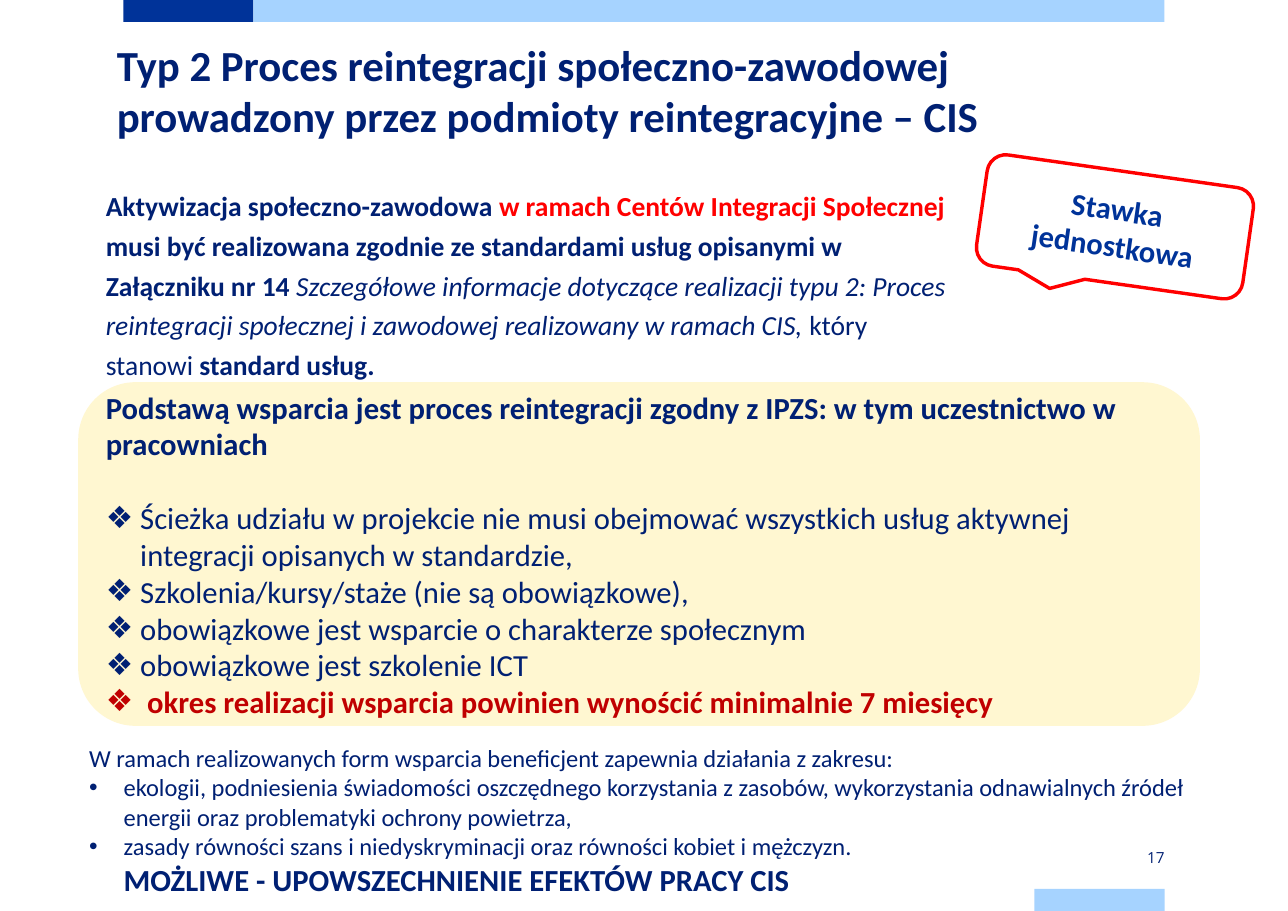
from dataclasses import dataclass

from lxml.etree import SubElement
from pptx import Presentation
from pptx.dml.color import RGBColor
from pptx.enum.shapes import MSO_SHAPE
from pptx.enum.text import MSO_ANCHOR, MSO_AUTO_SIZE, PP_ALIGN
from pptx.oxml.ns import qn
from pptx.util import Pt


@dataclass(frozen=True)
class Theme:
    navy: str = "002073"
    blue: str = "003399"
    sky: str = "A6D3FF"
    cream: str = "FFF7D1"
    red: str = "FF0000"
    crimson: str = "C00000"
    text_font: str = "Calibri"
    number_font: str = "Open Sans"
    title: int = 28
    large: int = 20
    intro: int = 18
    note: int = 16
    number: int = 10


THEME = Theme()
HANG = 22.5


def rgb(color):
    return RGBColor.from_string(color)


def set_frame(holder, anchor=MSO_ANCHOR.TOP, side=7.2, edge=3.6):
    frame = holder.text_frame
    frame.word_wrap = True
    frame.auto_size = MSO_AUTO_SIZE.NONE
    frame.vertical_anchor = anchor
    frame.margin_left = frame.margin_right = Pt(side)
    frame.margin_top = frame.margin_bottom = Pt(edge)
    return frame


def place(holder, left, top, width, height):
    holder.left, holder.top = Pt(left), Pt(top)
    holder.width, holder.height = Pt(width), Pt(height)


def add_paragraph(frame, first=False, align=PP_ALIGN.LEFT, bullet=None,
                  margin=0, hang=0, spacing=1.0, after=0):
    paragraph = frame.paragraphs[0] if first else frame.add_paragraph()
    properties = paragraph._p.get_or_add_pPr()
    properties.set("marL", str(Pt(margin)))
    properties.set("indent", str(-Pt(hang)))
    if bullet:
        SubElement(properties, qn("a:buFont")).set("typeface", "Arial")
        SubElement(properties, qn("a:buChar")).set("char", bullet)
    else:
        SubElement(properties, qn("a:buNone"))
    paragraph.alignment = align
    paragraph.line_spacing = spacing
    paragraph.space_before = Pt(0)
    paragraph.space_after = Pt(after)
    return paragraph


def write(paragraph, text, size=THEME.large, color=THEME.navy, bold=False,
          italic=False, font=THEME.text_font):
    run = paragraph.add_run()
    run.text = text
    run.font.name = font
    run.font.size = Pt(size)
    run.font.bold = bold
    run.font.italic = italic
    run.font.color.rgb = rgb(color)


def add_panel(slide, preset, bounds, fill=None, line=None):
    panel = slide.shapes.add_shape(preset, *map(Pt, bounds))
    panel.shadow.inherit = False
    if fill:
        panel.fill.solid()
        panel.fill.fore_color.rgb = rgb(fill)
    else:
        panel.fill.background()
    if line:
        panel.line.color.rgb = rgb(line)
        panel.line.width = Pt(2.25)
    else:
        panel.line.fill.background()
    return panel


def add_text_box(slide, bounds, anchor=MSO_ANCHOR.TOP):
    box = slide.shapes.add_textbox(*map(Pt, bounds))
    return set_frame(box, anchor, side=0, edge=0)


def add_bands(slide):
    for left, top, width, color in (
        (80.6, 0, 85, THEME.blue),
        (165.6, 0, 595.4, THEME.sky),
        (676, 581, 85, THEME.sky),
    ):
        add_panel(slide, MSO_SHAPE.RECTANGLE, (left, top, width, 14.4), color)


def add_title(slide):
    title = slide.shapes.title
    place(title, 69.1, 21.6, 672.5, 75)
    heading = add_paragraph(set_frame(title), first=True)
    write(heading, "Typ 2 Proces reintegracji społeczno-zawodowej prowadzony "
          "przez podmioty reintegracyjne – CIS", size=THEME.title, bold=True)


def add_intro(slide):
    frame = add_text_box(slide, (69.1, 119.5, 550, 84))
    intro = add_paragraph(frame, first=True, spacing=1.2)
    for text, style in (
        ("Aktywizacja społeczno-zawodowa ", {"bold": True}),
        ("w ramach Centów Integracji Społecznej ",
         {"bold": True, "color": THEME.red}),
        ("musi być realizowana zgodnie ze standardami usług opisanymi w "
         "Załączniku nr 14 ", {"bold": True}),
        ("Szczegółowe informacje dotyczące realizacji typu 2: Proces "
         "reintegracji społecznej i zawodowej realizowany w ramach CIS, ",
         {"italic": True}),
        ("który stanowi ", {}),
        ("standard usług.", {"bold": True}),
    ):
        write(intro, text, size=THEME.intro, **style)


def add_support_panel(slide):
    panel = add_panel(slide, MSO_SHAPE.ROUNDED_RECTANGLE,
                      (51.1, 249.8, 733, 224.6), THEME.cream)
    frame = set_frame(panel, MSO_ANCHOR.MIDDLE)
    basis = add_paragraph(frame, first=True, after=24.4)
    write(basis, "Podstawą wsparcia jest proces reintegracji zgodny z IPZS: "
          "w tym uczestnictwo w pracowniach", bold=True)
    for rule in (
        "Ścieżka udziału w projekcie nie musi obejmować wszystkich usług "
        "aktywnej integracji opisanych w standardzie,",
        "Szkolenia/kursy/staże (nie są obowiązkowe),",
        "obowiązkowe jest wsparcie o charakterze społecznym",
        "obowiązkowe jest szkolenie ICT",
    ):
        write(add_paragraph(frame, bullet="❖", margin=HANG, hang=HANG), rule)
    period = add_paragraph(frame, bullet="❖", margin=27, hang=27)
    write(period, "okres realizacji wsparcia powinien wynościć minimalnie "
          "7 miesięcy", color=THEME.crimson, bold=True)


def add_rate_callout(slide):
    callout = add_panel(slide, MSO_SHAPE.ROUNDED_RECTANGULAR_CALLOUT,
                        (640.8, 111.6, 175.7, 73.4), line=THEME.red)
    callout.rotation = 8.1
    frame = set_frame(callout, MSO_ANCHOR.MIDDLE)
    rate = add_paragraph(frame, first=True, align=PP_ALIGN.CENTER)
    write(rate, "Stawka jednostkowa", color=THEME.blue, bold=True)


def add_duties(slide):
    body = slide.placeholders[1]
    place(body, 51.1, 482, 733, 110)
    frame = set_frame(body)
    write(add_paragraph(frame, first=True), "W ramach realizowanych form "
          "wsparcia beneficjent zapewnia działania z zakresu:",
          size=THEME.note)
    for duty in (
        "ekologii, podniesienia świadomości oszczędnego korzystania z "
        "zasobów, wykorzystania odnawialnych źródeł energii oraz "
        "problematyki ochrony powietrza,",
        "zasady równości szans i niedyskryminacji oraz równości kobiet "
        "i mężczyzn.",
    ):
        write(add_paragraph(frame, bullet="•", margin=HANG, hang=HANG),
              duty, size=THEME.note)
    write(add_paragraph(frame, margin=HANG),
          "MOŻLIWE - UPOWSZECHNIENIE EFEKTÓW PRACY CIS", bold=True)


def add_page_number(slide):
    frame = add_text_box(slide, (676, 553, 85, 14.4), MSO_ANCHOR.MIDDLE)
    write(add_paragraph(frame, first=True, align=PP_ALIGN.RIGHT), "17",
          size=THEME.number, font=THEME.number_font)


def main():
    deck = Presentation()
    deck.slide_width, deck.slide_height = Pt(841.7), Pt(595.4)
    slide = deck.slides.add_slide(deck.slide_layouts[1])
    add_bands(slide)
    add_title(slide)
    add_intro(slide)
    add_support_panel(slide)
    add_rate_callout(slide)
    add_duties(slide)
    add_page_number(slide)
    deck.save("out.pptx")


if __name__ == "__main__":
    main()
